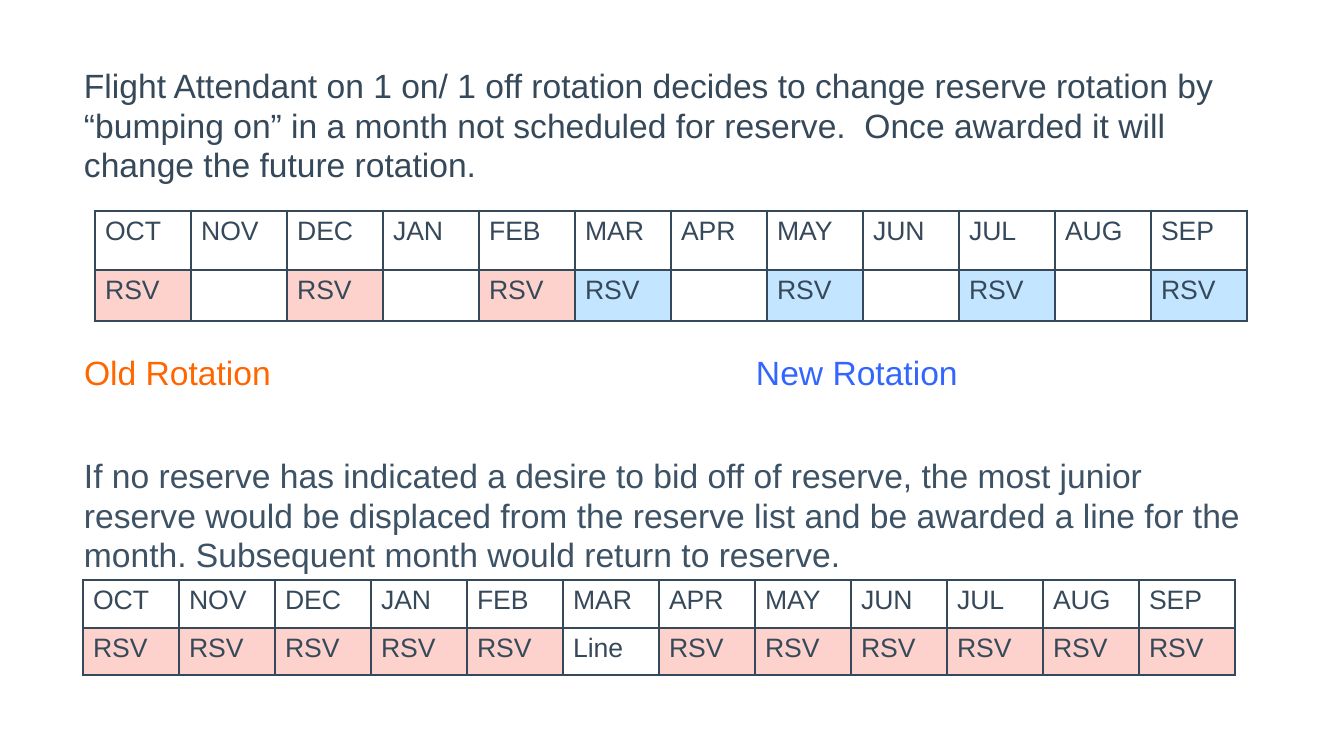
from pptx import Presentation
from pptx.dml.color import RGBColor as Rgb
from pptx.util import Pt
from lxml.etree import SubElement as Sub
from pptx.oxml.ns import qn

INK, RED, BLUE = "36495A", "FED2CC", "C3E5FF"
MONTHS = "OCT NOV DEC JAN FEB MAR APR MAY JUN JUL AUG SEP".split()
TEXTS = [
    (84, 65, 1163, 120, INK, "Flight Attendant on 1 on/ 1 off rotation decides to change reserve rotation by “bumping on” in a month not scheduled for reserve.  Once awarded it will change the future rotation."),
    (84, 352, 400, 40, "FF6600", "Old Rotation"),
    (756, 352, 400, 40, "3366FF", "New Rotation"),
    (84, 455, 1163, 120, "3D5265", "If no reserve has indicated a desire to bid off of reserve, the most junior reserve would be displaced from the reserve list and be awarded a line for the month. Subsequent month would return to reserve."),
]
OLD, NEW, OFF, LINE = ("RSV", RED), ("RSV", BLUE), ("", None), ("Line", None)
GRIDS = [
    (95, 211, (59, 51), [OLD, OFF] * 2 + [OLD] + [NEW, OFF] * 3 + [NEW]),
    (83, 580, (48, 47), [OLD] * 5 + [LINE] + [OLD] * 6),
]
COL = 96


def px(n):
    return round(n * 914400 / 100.8)


def paint(fill, tone):
    fill.solid()
    fill.fore_color.rgb = Rgb.from_string(tone)


def style(par, size, tone):
    par.font.name = "Arial"
    par.font.size = Pt(size)
    par.font.color.rgb = Rgb.from_string(tone)


def edge(cell):
    props = cell._tc.get_or_add_tcPr()
    for side in ("a:lnL", "a:lnR", "a:lnT", "a:lnB"):
        line = Sub(props, qn(side), w=str(Pt(1)))
        Sub(Sub(line, qn("a:solidFill")), qn("a:srgbClr"), val=INK)


def add_text(slide, x, y, w, h, tone, text):
    frame = slide.shapes.add_textbox(*map(px, (x, y, w, h))).text_frame
    frame.word_wrap = True
    frame.margin_left = frame.margin_right = 0
    frame.margin_top = frame.margin_bottom = 0
    par = frame.paragraphs[0]
    par.text = text
    par.line_spacing = Pt(28.5)
    style(par, 24, tone)


def add_grid(slide, x, y, tall, duty):
    rows = [[(month, None) for month in MONTHS], duty]
    size = map(px, (x, y, COL * len(MONTHS), sum(tall)))
    grid = slide.shapes.add_table(len(rows), len(MONTHS), *size).table
    grid.first_row = grid.horz_banding = False
    for col in grid.columns:
        col.width = px(COL)
    for r, row in enumerate(rows):
        grid.rows[r].height = px(tall[r])
        for c, (text, tone) in enumerate(row):
            cell = grid.cell(r, c)
            cell.text = text
            style(cell.text_frame.paragraphs[0], 19, INK)
            edge(cell)
            if tone:
                paint(cell.fill, tone)
            else:
                cell.fill.background()


def main():
    deck = Presentation()
    deck.slide_width, deck.slide_height = px(1344), px(756)
    slide = deck.slides.add_slide(deck.slide_layouts[6])
    paint(slide.background.fill, "FFFFFF")
    for item in TEXTS:
        add_text(slide, *item)
    for item in GRIDS:
        add_grid(slide, *item)
    deck.save("out.pptx")


if __name__ == "__main__":
    main()
